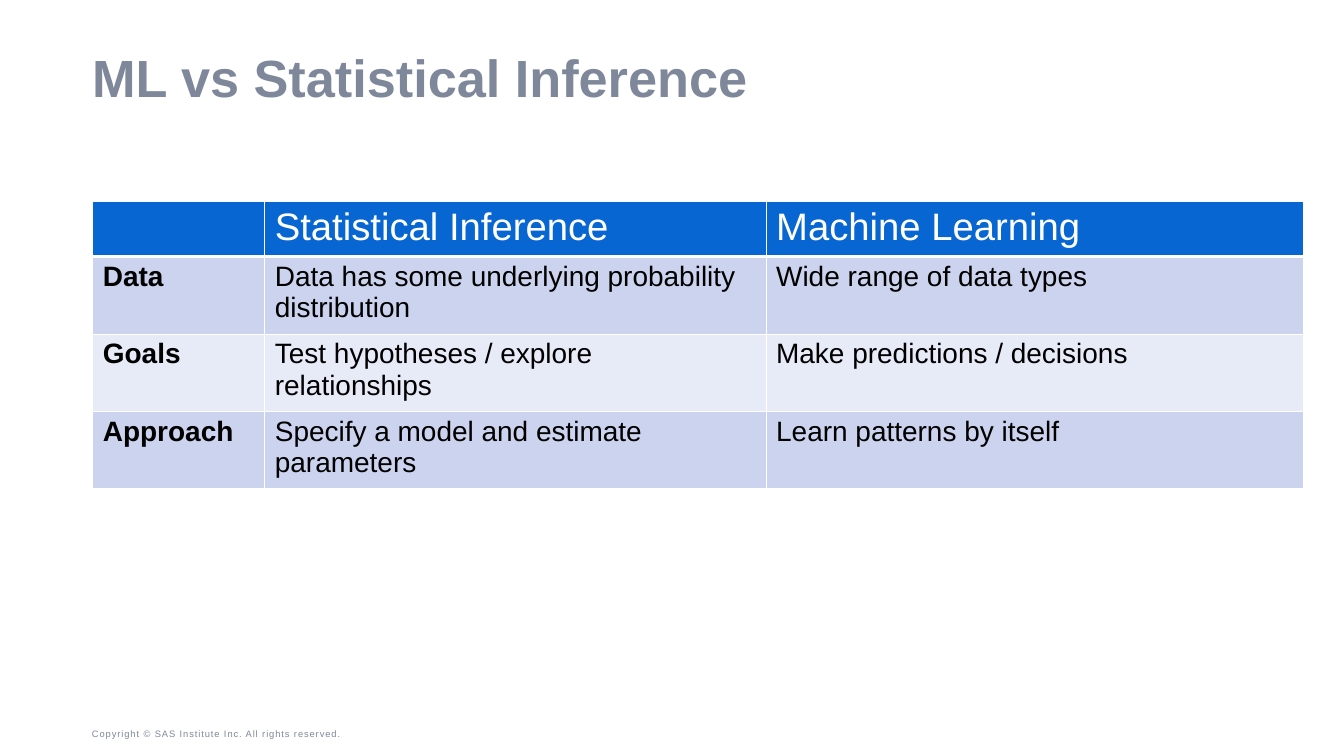
from lxml import etree
from pptx import Presentation
from pptx.dml.color import RGBColor
from pptx.enum.text import MSO_ANCHOR
from pptx.oxml.ns import qn
from pptx.util import Pt

MIDDLE, BOTTOM = MSO_ANCHOR.MIDDLE, MSO_ANCHOR.BOTTOM

FONT = "Arial"
GRAY = RGBColor(0x7E, 0x88, 0x9A)
BLUE = RGBColor(0x07, 0x66, 0xD1)
DARK_BAND = RGBColor(0xCC, 0xD3, 0xEE)
LIGHT_BAND = RGBColor(0xE7, 0xEA, 0xF7)
WHITE = RGBColor(0xFF, 0xFF, 0xFF)
BLACK = RGBColor(0x00, 0x00, 0x00)

COLUMN_WIDTHS = [184.3, 537.1, 576]
ROW_HEIGHTS = [59, 83, 83, 83]
ROWS = [
    ["", "Statistical Inference", "Machine Learning"],
    ["Data", "Data has some underlying probability distribution", "Wide range of data types"],
    ["Goals", "Test hypotheses / explore relationships", "Make predictions / decisions"],
    ["Approach", "Specify a model and estimate parameters", "Learn patterns by itself"],
]


def add_run(paragraph, text, size, color, bold=False):
    run = paragraph.add_run()
    run.text = text
    run.font.name = FONT
    run.font.size = Pt(size)
    run.font.bold = bold
    run.font.color.rgb = color
    return run


def set_margins(target, left, top, right, bottom):
    target.margin_left, target.margin_top = Pt(left), Pt(top)
    target.margin_right, target.margin_bottom = Pt(right), Pt(bottom)


def add_text_box(slide, box, anchor, margins):
    """Add an empty wrapped text box and return its first paragraph."""
    frame = slide.shapes.add_textbox(*map(Pt, box)).text_frame
    frame.word_wrap = True
    frame.vertical_anchor = anchor
    set_margins(frame, *margins)
    return frame.paragraphs[0]


def add_title(slide, box):
    paragraph = add_text_box(slide, box, MIDDLE, (0, 0, 0, 0))
    paragraph.line_spacing = 0.9
    add_run(paragraph, "ML vs Statistical Inference", 56, GRAY, bold=True)


def add_copyright(slide, box):
    paragraph = add_text_box(slide, box, BOTTOM, (0, 3.6, 7.2, 3.6))
    run = add_run(paragraph, "Copyright © SAS Institute Inc. All rights reserved.", 10, GRAY)
    run.font._element.set("spc", "100")  # letter spacing of 1 pt


def set_borders(cell, bottom_width):
    properties = cell._tc.get_or_add_tcPr()
    for side, width in (("L", 1), ("R", 1), ("T", 1), ("B", bottom_width)):
        line = etree.SubElement(properties, qn(f"a:ln{side}"), w=str(Pt(width)))
        fill = etree.SubElement(line, qn("a:solidFill"))
        etree.SubElement(fill, qn("a:srgbClr"), val=str(WHITE))


def add_comparison_table(slide, left, top):
    table = slide.shapes.add_table(
        len(ROWS), len(COLUMN_WIDTHS), Pt(left), Pt(top),
        Pt(sum(COLUMN_WIDTHS)), Pt(sum(ROW_HEIGHTS))).table
    for column, width in zip(table.columns, COLUMN_WIDTHS):
        column.width = Pt(width)
    for row, height in zip(table.rows, ROW_HEIGHTS):
        row.height = Pt(height)

    for row_index, texts in enumerate(ROWS):
        is_header = row_index == 0
        band = BLUE if is_header else DARK_BAND if row_index % 2 else LIGHT_BAND
        size, color = (41, WHITE) if is_header else (30, BLACK)
        for column_index, text in enumerate(texts):
            cell = table.cell(row_index, column_index)
            set_margins(cell, 10.8, 5, 10.8, 5)
            set_borders(cell, 3 if is_header else 1)
            cell.fill.solid()
            cell.fill.fore_color.rgb = band
            if text:
                add_run(cell.text_frame.paragraphs[0], text, size, color,
                        bold=column_index == 0)


def main():
    presentation = Presentation()
    presentation.slide_width, presentation.slide_height = Pt(1440), Pt(810)
    slide = presentation.slides.add_slide(presentation.slide_layouts[6])

    # Footer, title and table
    add_copyright(slide, (98.6, 776.2, 396, 19.4))
    add_title(slide, (98.6, 56.2, 1242, 61.2))
    add_comparison_table(slide, 99.4, 215.6)

    presentation.save("out.pptx")


if __name__ == "__main__":
    main()
